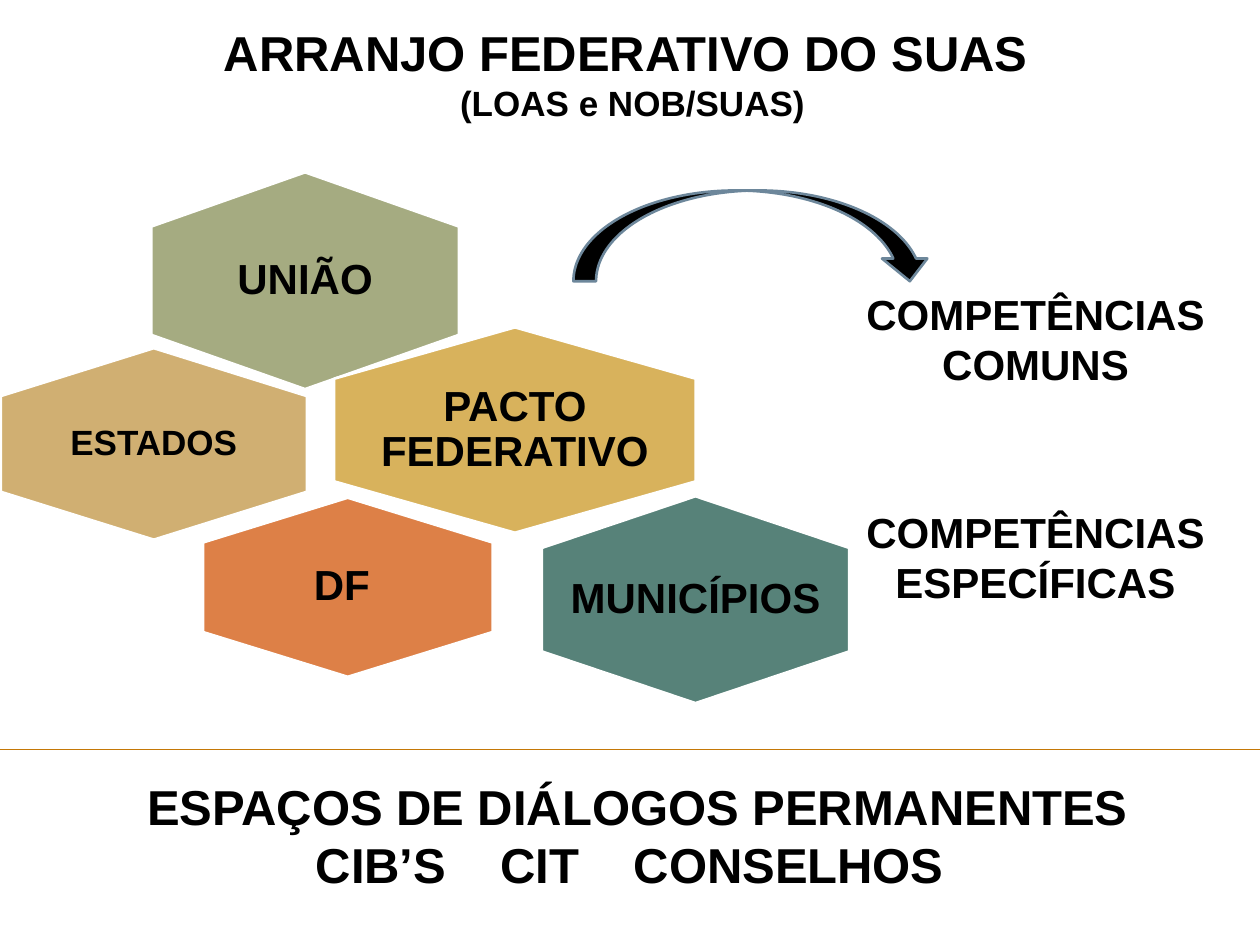
from dataclasses import dataclass

from lxml import etree
from pptx import Presentation
from pptx.dml.color import RGBColor
from pptx.enum import shapes, text
from pptx.oxml import ns
from pptx.util import Cm, Pt

FONT = "Arial"
COLORS = {
    "text": "000000",
    "outline": "FFFFFF",
    "green": "A5AB81",
    "sand": "D0AF72",
    "gold": "D8B25C",
    "orange": "DD8047",
    "teal": "578279",
    "arrow_outline": "6D879B",
    "divider": "C47807",
}


@dataclass
class Hexagon:
    """A hexagon and its label; lengths in cm, placed by the centre."""
    label: str
    color: str
    x: float
    y: float
    width: float
    height: float
    label_width: float
    label_height: float
    inset: float = 0
    size: int = 24


HEXAGONS = [
    Hexagon("DF ", "orange", 7.01, 11.84, 5.84, 3.61, 3.89, 2.41),
    Hexagon("UNIÃO", "green", 6.15, 5.66, 6.2, 4.37, 4.11, 2.92),
    Hexagon("ESTADOS", "sand", 3.1, 8.95, 6.17, 3.86, 4.11, 2.57, 0.2, 20),
    Hexagon("PACTO FEDERATIVO", "gold", 10.38, 8.67, 7.29, 4.14, 6.2, 2.77, 0.25),
    Hexagon("MUNICÍPIOS", "teal", 14.02, 12.09, 6.2, 4.17, 5.41, 2.77),
]


def rgb(name: str) -> RGBColor:
    return RGBColor.from_string(COLORS[name])


def paint(shape, fill: str, outline: str) -> None:
    shape.shadow.inherit = False
    shape.fill.solid()
    shape.fill.fore_color.rgb = rgb(fill)
    shape.line.color.rgb = rgb(outline)
    shape.line.width = Pt(1.5)


def write(paragraph, words: str, size: int) -> None:
    paragraph.alignment = text.PP_ALIGN.CENTER
    run = paragraph.add_run()
    run.text = words
    run.font.name = FONT
    run.font.size = Pt(size)
    run.font.bold = True
    run.font.color.rgb = rgb("text")


def add_text_frame(slide, left: float, top: float, width: float, height: float):
    box = slide.shapes.add_textbox(Cm(left), Cm(top), Cm(width), Cm(height))
    box.text_frame.word_wrap = True
    return box.text_frame


def add_hexagon(slide, item: Hexagon) -> None:
    # The preset is turned upright, so its own width is the visible height
    shape = slide.shapes.add_shape(
        shapes.MSO_SHAPE.HEXAGON,
        Cm(item.x - item.height / 2), Cm(item.y - item.width / 2),
        Cm(item.height), Cm(item.width))
    shape.rotation = 90
    paint(shape, item.color, "outline")

    frame = add_text_frame(
        slide, item.x - item.label_width / 2, item.y - item.label_height / 2,
        item.label_width, item.label_height)
    frame.margin_left = frame.margin_right = Cm(item.inset)
    frame.margin_top = frame.margin_bottom = Cm(item.inset)
    frame.vertical_anchor = text.MSO_ANCHOR.MIDDLE
    paragraph = frame.paragraphs[0]
    paragraph.line_spacing = 0.9
    write(paragraph, item.label, item.size)


def add_center_tabs(paragraph, positions: list[float]) -> None:
    properties = paragraph._p.get_or_add_pPr()
    tabs = etree.SubElement(properties, ns.qn("a:tabLst"))
    for position in positions:
        etree.SubElement(tabs, ns.qn("a:tab"), pos=str(Cm(position)), algn="ctr")


def main() -> None:
    presentation = Presentation()
    presentation.slide_width = Cm(25.4)
    presentation.slide_height = Cm(19.05)
    slide = presentation.slides.add_slide(presentation.slide_layouts[5])

    # Title
    title = slide.shapes.title
    title.left, title.top, title.width, title.height = (
        Cm(0.43), Cm(0.33), Cm(24.64), Cm(2.31))
    frame = title.text_frame
    frame.auto_size = text.MSO_AUTO_SIZE.NONE
    frame.vertical_anchor = text.MSO_ANCHOR.TOP
    write(frame.paragraphs[0], "ARRANJO FEDERATIVO DO SUAS ", 28)
    write(frame.add_paragraph(), "(LOAS e NOB/SUAS)", 20)

    # Members of the federative pact
    for item in HEXAGONS:
        add_hexagon(slide, item)

    # Arrow to the competences
    arrow = slide.shapes.add_shape(
        shapes.MSO_SHAPE.CURVED_DOWN_ARROW, Cm(11.56), Cm(3.84), Cm(7.24), Cm(1.83))
    paint(arrow, "text", "arrow_outline")

    # Competences
    frame = add_text_frame(slide, 16.71, 5.69, 8.33, 7.95)
    write(frame.paragraphs[0], "COMPETÊNCIAS COMUNS", 24)
    paragraph = frame.add_paragraph()
    paragraph.space_before = Pt(67)
    write(paragraph, "COMPETÊNCIAS ESPECÍFICAS", 24)

    # Divider
    divider = slide.shapes.add_connector(
        shapes.MSO_CONNECTOR.STRAIGHT, 0, Cm(15.11), Cm(25.4), Cm(15.11))
    divider.line.color.rgb = rgb("divider")
    divider.line.width = Pt(0.75)
    etree.SubElement(divider._element.spPr, ns.qn("a:effectLst"))

    # Spaces for dialogue
    frame = add_text_frame(slide, 0.3, 15.52, 25.1, 2.64)
    write(frame.paragraphs[0], "ESPAÇOS DE DIÁLOGOS PERMANENTES", 28)
    paragraph = frame.add_paragraph()
    add_center_tabs(paragraph, [7.13, 10.33, 15.35])
    write(paragraph, "\tCIB’S\tCIT\tCONSELHOS", 28)
    paragraph.alignment = text.PP_ALIGN.LEFT

    presentation.save("out.pptx")


if __name__ == "__main__":
    main()
